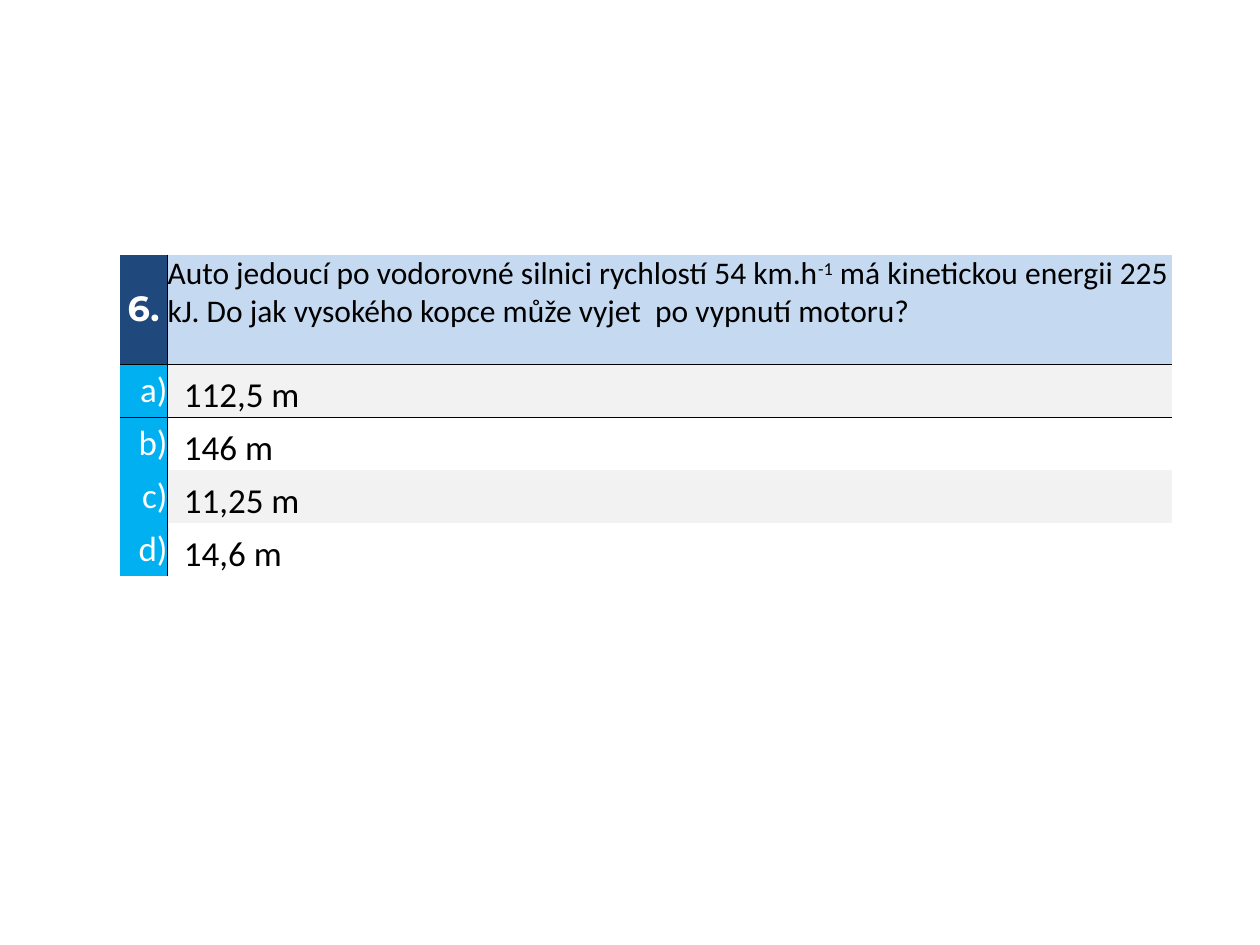
import pptx
import pptx.dml.color
import pptx.enum.text
import pptx.oxml
import pptx.oxml.ns
import pptx.util

Inches = pptx.util.Inches
ALIGN = pptx.enum.text.PP_ALIGN
ANCHOR = pptx.enum.text.MSO_ANCHOR

COLORS = {
    "navy": "1F497D",
    "pale_blue": "C5D9F1",
    "cyan": "00B0F0",
    "band": "F2F2F2",
    "white": "FFFFFF",
    "black": "000000",
}
NO_STYLE = "{2D5ABB26-0587-4C30-8999-92F81FD0307C}"
QUESTION = [
    ("Auto jedoucí po vodorovné silnici rychlostí 54 km.h", False),
    ("-1", True),
    (" má kinetickou energii 225 kJ. Do jak vysokého kopce může vyjet  po vypnutí motoru?", False),
]
ANSWERS = [("a)", "112,5 m"), ("b)", "146 m"), ("c)", "11,25 m"), ("d)", "14,6 m")]


class QuizSlide:
    def __init__(self, presentation):
        self.slide = presentation.slides.add_slide(presentation.slide_layouts[6])
        self.font_name = "Calibri"
        self.border_width = pptx.util.Pt(0.5)

    def add_table(self, left, top, widths, heights):
        frame = self.slide.shapes.add_table(
            len(heights), len(widths), Inches(left), Inches(top),
            Inches(sum(widths)), Inches(sum(heights)))
        table = frame.table
        table.first_row = table.horz_banding = False
        frame._element.find(".//" + pptx.oxml.ns.qn("a:tableStyleId")).text = NO_STYLE
        for column, width in zip(table.columns, widths):
            column.width = Inches(width)
        for row, height in zip(table.rows, heights):
            row.height = Inches(height)
        return table

    def fill_cell(self, cell, runs, fill, color="black", size=20, font_name=None, bold=False,
                  align=ALIGN.LEFT, anchor=ANCHOR.MIDDLE, indent=0, borders=""):
        """Style one cell; runs are (text, superscript) pairs, borders are letters of LRTB."""
        cell.margin_left = Inches(indent)
        cell.margin_right = cell.margin_top = cell.margin_bottom = 0
        cell.vertical_anchor = anchor
        if fill:
            cell.fill.solid()
            cell.fill.fore_color.rgb = pptx.dml.color.RGBColor.from_string(COLORS[fill])
        else:
            cell.fill.background()
        self.add_borders(cell, borders)
        paragraph = cell.text_frame.paragraphs[0]
        paragraph.alignment = align
        font = paragraph.font
        font.name = font_name or self.font_name
        font.size = pptx.util.Pt(size)
        font.bold = bold
        font.color.rgb = pptx.dml.color.RGBColor.from_string(COLORS[color])
        for text, superscript in runs:
            run = paragraph.add_run()
            run.text = text
            if superscript:
                run._r.get_or_add_rPr().set("baseline", "30000")

    def add_borders(self, cell, sides):
        properties = cell._tc.get_or_add_tcPr()
        for position, side in enumerate(side for side in "LRTB" if side in sides):
            line = pptx.oxml.parse_xml(
                f'<a:ln{side} {pptx.oxml.ns.nsdecls("a")} w="{self.border_width}"><a:solidFill>'
                f'<a:srgbClr val="{COLORS["black"]}"/></a:solidFill></a:ln{side}>')
            properties.insert(position, line)


def main():
    presentation = pptx.Presentation()
    presentation.slide_width = Inches(10)
    presentation.slide_height = Inches(7.5)
    quiz = QuizSlide(presentation)
    table = quiz.add_table(0.95, 2.02, [0.38, 7.97], [0.87] + [0.42] * len(ANSWERS))

    quiz.fill_cell(table.cell(0, 0), [("6.", False)], "navy", "white", font_name="Montserrat",
                   bold=True, align=ALIGN.CENTER, borders="RB")
    quiz.fill_cell(table.cell(0, 1), QUESTION, "pale_blue", size=18, anchor=ANCHOR.TOP,
                   borders="LB")
    for row, (letter, answer) in enumerate(ANSWERS, start=1):
        top_border = "T" if row == 1 else ""
        quiz.fill_cell(table.cell(row, 0), [(letter, False)], "cyan", "white",
                       align=ALIGN.RIGHT, borders="R" + top_border)
        quiz.fill_cell(table.cell(row, 1), [(answer, False)], "band" if row % 2 else None,
                       anchor=ANCHOR.BOTTOM, indent=0.13, borders="L" + top_border)
    presentation.save("out.pptx")


if __name__ == "__main__":
    main()
